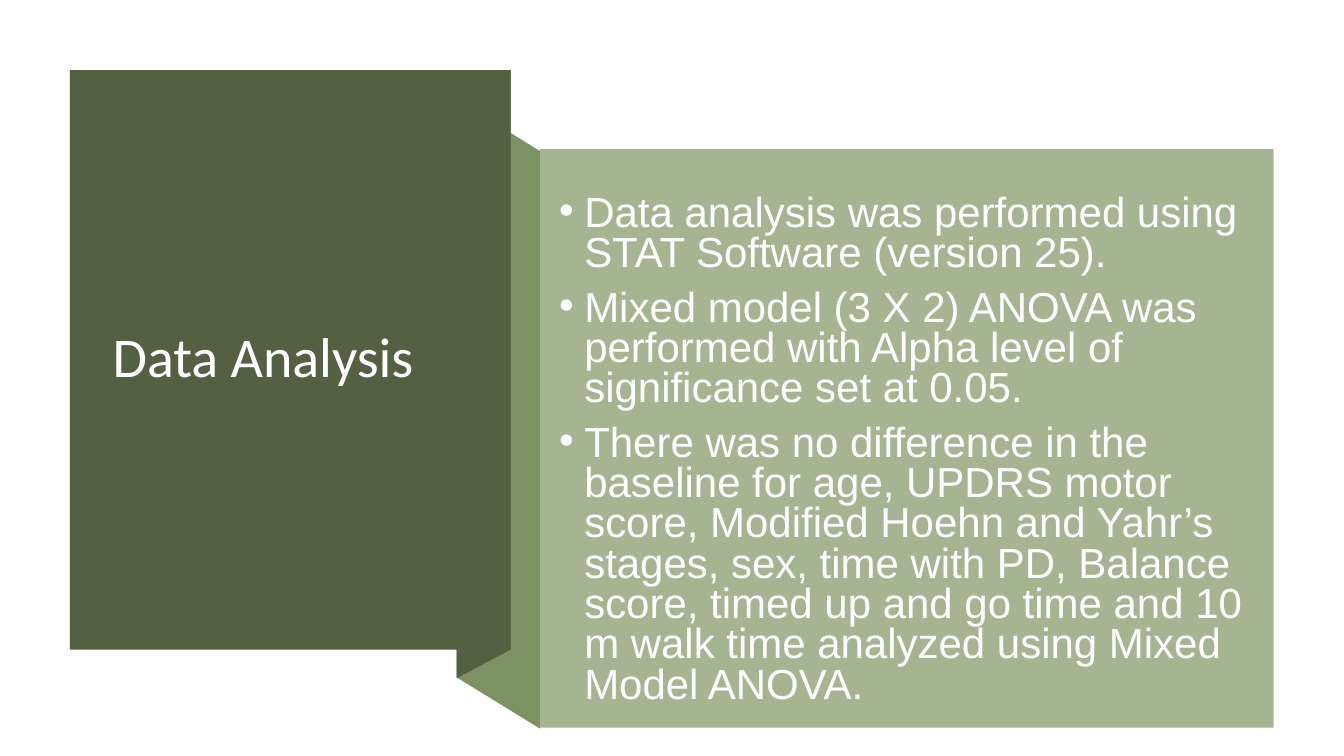
"""Build the Data Analysis slide: a folded ribbon title beside a bullet panel."""
from pptx import Presentation
from pptx.dml.color import RGBColor
from pptx.enum.shapes import MSO_SHAPE
from pptx.enum.text import MSO_ANCHOR
from pptx.oxml.ns import qn
from pptx.util import Cm, Pt
from lxml import etree

RECTANGLE = MSO_SHAPE.RECTANGLE
MIDDLE = MSO_ANCHOR.MIDDLE

TITLE = "Data Analysis"
FINDINGS = [
    "Data analysis was performed using STAT Software (version 25).",
    "Mixed model (3 X 2) ANOVA was performed with Alpha level of significance set at 0.05.",
    "There was no difference in the baseline for age, UPDRS motor score, "
    "Modified Hoehn and Yahr’s stages, sex, time with PD, Balance score, "
    "timed up and go time and 10 m walk time analyzed using Mixed Model ANOVA.",
]
COLORS = {
    "dark": "536142",
    "ribbon": "7D9263",
    "panel": "A5B592",
    "title": "FFFFFF",
    "finding": "FEFFFF",
}
FOLD_LEFT, FRONT_RIGHT, PANEL_LEFT = 11.51, 12.87, 13.61
FRONT_LEFT, FRONT_TOP, FRONT_BOTTOM = 1.76, 1.77, 16.37
RIBBON = [(PANEL_LEFT, 18.36), (FOLD_LEFT, 17.07), (FOLD_LEFT, 2.51), (PANEL_LEFT, 3.81)]
FOLD = [(FRONT_RIGHT, FRONT_BOTTOM), (FOLD_LEFT, 17.09), (FOLD_LEFT, 2.5), (FRONT_RIGHT, FRONT_TOP)]
FRONT = (FRONT_LEFT, FRONT_TOP, FRONT_RIGHT - FRONT_LEFT, FRONT_BOTTOM - FRONT_TOP)
PANEL = (PANEL_LEFT, 3.76, 18.49, 14.58)
TITLE_BOX = (2.59, 2.72, 9.42, 12.67)
FINDINGS_BOX = (13.84, 4.65, 17.83, 13.44)
INDENT = Cm(0.635)


def paint(shape, color):
    shape.fill.solid()
    shape.fill.fore_color.rgb = RGBColor.from_string(COLORS[color])
    shape.line.fill.background()
    shape.shadow.inherit = False


def add_outline(slide, points, color):
    corners = [(Cm(x), Cm(y)) for x, y in points]
    builder = slide.shapes.build_freeform(*corners[0])
    builder.add_line_segments(corners[1:], close=True)
    paint(builder.convert_to_shape(), color)


def add_rectangle(slide, box, color):
    paint(slide.shapes.add_shape(RECTANGLE, *map(Cm, box)), color)


def add_frame(slide, box):
    frame = slide.shapes.add_textbox(*map(Cm, box)).text_frame
    frame.word_wrap = True
    frame.vertical_anchor = MIDDLE
    return frame


def add_text(paragraph, text, font, size, color, spacing):
    paragraph.line_spacing = spacing
    run = paragraph.add_run()
    run.text = text
    run.font.name = font
    run.font.size = Pt(size)
    run.font.color.rgb = RGBColor.from_string(COLORS[color])


def add_bullet(paragraph):
    properties = paragraph._p.get_or_add_pPr()
    properties.set("marL", str(INDENT))
    properties.set("indent", str(-INDENT))
    etree.SubElement(properties, qn("a:buFont")).set("typeface", "Arial")
    etree.SubElement(properties, qn("a:buChar")).set("char", "•")


def main():
    deck = Presentation()
    deck.slide_width, deck.slide_height = Cm(33.87), Cm(19.05)
    slide = deck.slides.add_slide(deck.slide_layouts[6])

    add_outline(slide, RIBBON, "ribbon")
    add_outline(slide, FOLD, "dark")
    add_rectangle(slide, FRONT, "dark")
    title = add_frame(slide, TITLE_BOX)
    add_text(title.paragraphs[0], TITLE, "Calibri", 40, "title", 0.9)

    add_rectangle(slide, PANEL, "panel")
    findings = add_frame(slide, FINDINGS_BOX)
    for number, finding in enumerate(FINDINGS):
        paragraph = findings.add_paragraph() if number else findings.paragraphs[0]
        add_text(paragraph, finding, "Arial", 30, "finding", 0.8)
        paragraph.space_before = Pt(10)
        add_bullet(paragraph)

    deck.save("out.pptx")


if __name__ == "__main__":
    main()
